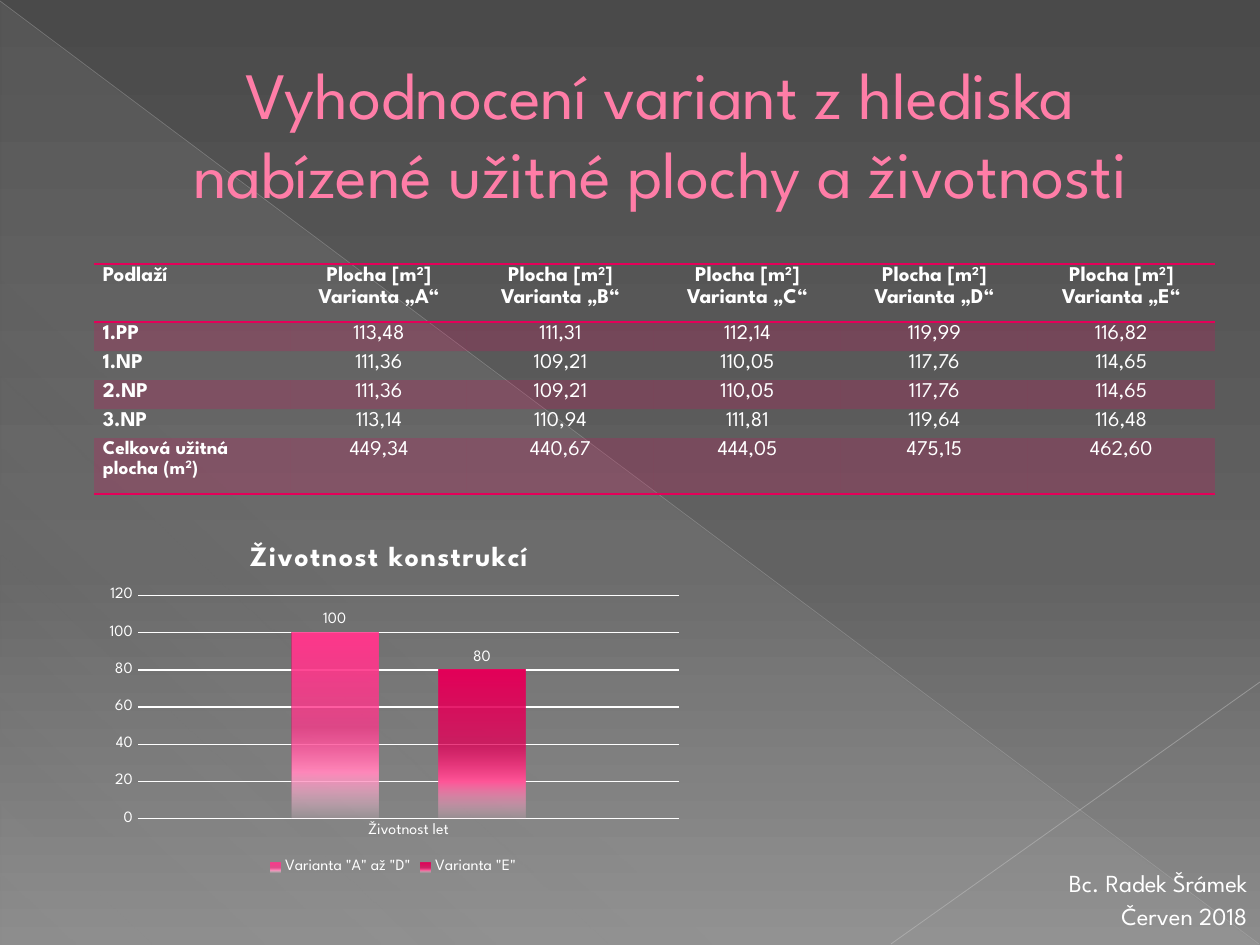
from typing import NamedTuple

from lxml import etree
from pptx import Presentation
from pptx import util as u
from pptx.chart.data import CategoryChartData
from pptx.dml.color import RGBColor
from pptx.enum import chart as charts, shapes, text
from pptx.oxml.ns import qn

EMU_PER_PX = 914400 / 126
FONT = "League Spartan"
WHITE, CRIMSON, PINK = "FFFFFF", "E40059", "FF7DA7"
NO_TABLE_STYLE = "{2D5ABB26-0587-4C30-8999-92F81FD0307C}"


class Stop(NamedTuple):
    position: int
    color: str
    opacity: int = 100


class Ray(NamedTuple):
    start: tuple[int, int]
    end: tuple[int, int]
    color: str
    width: float
    opacity: int


class Bar(NamedTuple):
    name: str
    value: int
    stops: list[Stop]


BACKGROUND = [Stop(0, "4A4A4A"), Stop(60, "626262"), Stop(100, "8C8C8C")]
TRIANGLE = [Stop(0, "D2D2D2", 10), Stop(70, "D2D2D2", 8), Stop(100, "D2D2D2", 1)]
RAYS = [
    Ray((0, 1), (1259, 944), "BFBFBF", 0.39, 35),
    Ray((1260, 682), (891, 944), "C6C6C6", 0.47, 45),
]
COLUMN_WIDTHS = [197, 176, 187, 187, 187, 187]
ROW_HEIGHTS = [45, 22, 22, 22, 22, 56]
VARIANTS = "ABCDE"
FLOORS = [
    ("1.PP", "113,48", "111,31", "112,14", "119,99", "116,82"),
    ("1.NP", "111,36", "109,21", "110,05", "117,76", "114,65"),
    ("2.NP", "111,36", "109,21", "110,05", "117,76", "114,65"),
    ("3.NP", "113,14", "110,94", "111,81", "119,64", "116,48"),
]
TOTALS = ("449,34", "440,67", "444,05", "475,15", "462,60")
BARS = [
    Bar('Varianta "A" až "D"', 100, [Stop(0, "FF388C"), Stop(51, "FF388C", 75),
                                     Stop(75, "FF88BA"), Stop(100, "FFD7E8", 15)]),
    Bar('Varianta "E"', 80, [Stop(0, CRIMSON), Stop(51, CRIMSON, 75),
                             Stop(75, "FF5698"), Stop(100, "FFC7DD", 15)]),
]


def px(length: float) -> int:
    return round(length * EMU_PER_PX)


def rgb(color: str) -> RGBColor:
    return RGBColor.from_string(color)


def add_color(parent, color: str, opacity: int = 100) -> None:
    element = etree.SubElement(parent, qn("a:srgbClr"), val=color)
    if opacity < 100:
        etree.SubElement(element, qn("a:alpha"), val=str(opacity * 1000))


def set_opacity(owner, opacity: int) -> None:
    color = owner.find(".//" + qn("a:srgbClr"))
    etree.SubElement(color, qn("a:alpha"), val=str(opacity * 1000))


def set_gradient(fill, owner, stops: list[Stop], angle: int) -> None:
    """Fill with stops, the angle running clockwise from left to right."""
    fill.gradient()
    gradient = owner.find(".//" + qn("a:gradFill"))
    stop_list = gradient.find(qn("a:gsLst"))
    for old in list(stop_list):
        stop_list.remove(old)
    for stop in stops:
        item = etree.SubElement(stop_list, qn("a:gs"), pos=str(stop.position * 1000))
        add_color(item, stop.color, stop.opacity)
    gradient.find(qn("a:lin")).set("ang", str(angle * 60000))


def style_font(font, size: float, color: str = WHITE, bold: bool = False) -> None:
    font.name, font.size, font.bold = FONT, u.Pt(size), bold
    font.color.rgb = rgb(color)


def add_run(paragraph, content: str, size: float, color: str = WHITE,
            bold: bool = False, raised: bool = False):
    run = paragraph.add_run()
    run.text = content
    style_font(run.font, size, color, bold)
    if raised:
        run.font._element.set("baseline", "30000")
    return run


def add_backdrop(slide) -> None:
    set_gradient(slide.background.fill, slide.element, BACKGROUND, 90)
    triangle = slide.shapes.add_shape(
        shapes.MSO_SHAPE.RIGHT_TRIANGLE, px(1), px(2), px(1258), px(943))
    triangle.shadow.inherit = False
    triangle.line.fill.background()
    set_gradient(triangle.fill, triangle.element, TRIANGLE, 133)
    for ray in RAYS:
        line = slide.shapes.add_connector(
            shapes.MSO_CONNECTOR.STRAIGHT, *map(px, ray.start + ray.end))
        line.line.width = u.Pt(ray.width)
        line.line.color.rgb = rgb(ray.color)
        properties = line.element.spPr
        set_opacity(properties, ray.opacity)
        etree.SubElement(properties, qn("a:effectLst"))


def add_text_box(slide, box: tuple[int, int, int, int], lines: list[str], size: float,
                 color: str, alignment, pitch: float, indent: int):
    frame = slide.shapes.add_textbox(*map(px, box)).text_frame
    frame.word_wrap = True
    for index, line in enumerate(lines):
        paragraph = frame.add_paragraph() if index else frame.paragraphs[0]
        paragraph.alignment = alignment
        paragraph.line_spacing = u.Pt(pitch)
        paragraph._p.get_or_add_pPr().set("marL", str(px(indent)))
        add_run(paragraph, line, size, color)
    return frame


def add_title(slide) -> None:
    frame = add_text_box(
        slide, (60, 37, 1134, 192),
        ["Vyhodnocení variant z hlediska nabízené užitné plochy a životnosti"],
        37.8, PINK, text.PP_ALIGN.CENTER, 45, 67)
    frame.vertical_anchor = text.MSO_ANCHOR.MIDDLE
    outline = etree.Element(qn("a:ln"), w=str(u.Pt(0.5)))
    add_color(etree.SubElement(outline, qn("a:solidFill")), "B12761")
    frame.paragraphs[0].runs[0].font._element.insert(0, outline)


def add_border(cell, side: str, index: int) -> None:
    border = etree.Element(qn(f"a:ln{side}"), w=str(u.Pt(1)))
    add_color(etree.SubElement(border, qn("a:solidFill")), CRIMSON)
    cell._tc.get_or_add_tcPr().insert(index, border)


def cell_paragraph(cell, centered: bool, first: bool = True):
    frame = cell.text_frame
    paragraph = frame.paragraphs[0] if first else frame.add_paragraph()
    paragraph.alignment = text.PP_ALIGN.CENTER if centered else text.PP_ALIGN.LEFT
    paragraph.line_spacing = 1.15
    return paragraph


def add_area_table(slide) -> None:
    table = slide.shapes.add_table(
        len(ROW_HEIGHTS), len(COLUMN_WIDTHS), px(94), px(264),
        px(sum(COLUMN_WIDTHS)), px(sum(ROW_HEIGHTS))).table
    table.first_row = table.horz_banding = False
    table._tbl.tblPr.find(qn("a:tableStyleId")).text = NO_TABLE_STYLE
    for column, width in zip(table.columns, COLUMN_WIDTHS):
        column.width = px(width)
    last = len(ROW_HEIGHTS) - 1
    for r, (row, height) in enumerate(zip(table.rows, ROW_HEIGHTS)):
        row.height = px(height)
        for cell in row.cells:
            cell.margin_left = cell.margin_right = px(9)
            cell.margin_top = cell.margin_bottom = 0
            if r % 2:
                cell.fill.solid()
                cell.fill.fore_color.rgb = rgb(CRIMSON)
                set_opacity(cell._tc.tcPr, 20)
            else:
                cell.fill.background()
            if r == 0:
                add_border(cell, "T", 0)
            if r in (0, last):
                add_border(cell, "B", 1 if r == 0 else 0)

    add_run(cell_paragraph(table.cell(0, 0), False), "Podlaží", 12, bold=True)
    for c, variant in enumerate(VARIANTS, 1):
        header = table.cell(0, c)
        unit = cell_paragraph(header, True)
        add_run(unit, "Plocha [m", 12, bold=True)
        add_run(unit, "2", 12, bold=True, raised=True)
        add_run(unit, "]", 12, bold=True)
        add_run(cell_paragraph(header, True, False), f"Varianta „{variant}“", 12, bold=True)
    for r, floor in enumerate(FLOORS, 1):
        for c, value in enumerate(floor):
            add_run(cell_paragraph(table.cell(r, c), c > 0), value, 12, bold=c == 0)
    total = cell_paragraph(table.cell(last, 0), False)
    add_run(total, "Celková užitná plocha (m", 11, bold=True)
    add_run(total, "2", 11, bold=True, raised=True)
    add_run(total, ")", 11, bold=True)
    for c, value in enumerate(TOTALS, 1):
        add_run(cell_paragraph(table.cell(last, c), True), value, 12)


def set_layout(parent, index: int, **values) -> None:
    """Give a chart part a manual layout, in fractions of the chart."""
    for old in parent.findall(qn("c:layout")):
        parent.remove(old)
    layout = etree.Element(qn("c:layout"))
    manual = etree.SubElement(layout, qn("c:manualLayout"))
    for tag, value in values.items():
        etree.SubElement(manual, qn(f"c:{tag}"), val=str(value))
    parent.insert(index, layout)


def add_lifetime_chart(slide) -> None:
    data = CategoryChartData()
    data.categories = ["Životnost let"]
    for bar in BARS:
        data.add_series(bar.name, [bar.value])
    chart = slide.shapes.add_chart(charts.XL_CHART_TYPE.COLUMN_CLUSTERED, px(96), px(520),
                                   px(595), px(360), data).chart
    style_font(chart.font, 10)
    title = add_run(chart.chart_title.text_frame.paragraphs[0],
                    "Životnost konstrukcí", 16, bold=True)
    title.font._element.set("spc", "100")
    set_layout(chart.chart_title._element, 1, xMode="edge", yMode="edge", x=0.25, y=0.05)
    set_layout(chart.element.find(".//" + qn("c:plotArea")), 0, layoutTarget="inner",
               xMode="edge", yMode="edge", x=0.07, y=0.21, w=0.91, h=0.62)
    chart.has_legend = True
    chart.legend.position = charts.XL_LEGEND_POSITION.BOTTOM
    chart.legend.include_in_layout = False
    style_font(chart.legend.font, 9)

    categories, values = chart.category_axis, chart.value_axis
    for axis in (categories, values):
        axis.major_tick_mark = axis.minor_tick_mark = charts.XL_TICK_MARK.NONE
        style_font(axis.tick_labels.font, 9)
    values.minimum_scale, values.maximum_scale, values.major_unit = 0, 120, 20
    values.format.line.fill.background()
    for line in (categories.format.line, values.major_gridlines.format.line):
        line.width = u.Pt(0.75)
        line.color.rgb = rgb(WHITE)

    plot = chart.plots[0]
    plot.gap_width, plot.overlap, plot.vary_by_categories = 355, -70, False
    for series, bar in zip(plot.series, BARS):
        set_gradient(series.format.fill, series._element, bar.stops, 90)
        labels = series.data_labels
        labels.show_value = True
        labels.position = charts.XL_LABEL_POSITION.OUTSIDE_END
        style_font(labels.font, 9)


def main() -> None:
    presentation = Presentation()
    presentation.slide_width, presentation.slide_height = px(1260), px(945)
    slide = presentation.slides.add_slide(presentation.slide_layouts[6])
    add_backdrop(slide)
    add_title(slide)
    add_area_table(slide)
    add_text_box(slide, (126, 858, 1134, 84), ["Bc. Radek Šrámek", "Červen 2018"],
                 14, WHITE, text.PP_ALIGN.RIGHT, 18.9, 9)
    add_lifetime_chart(slide)
    presentation.save("out.pptx")


if __name__ == "__main__":
    main()
